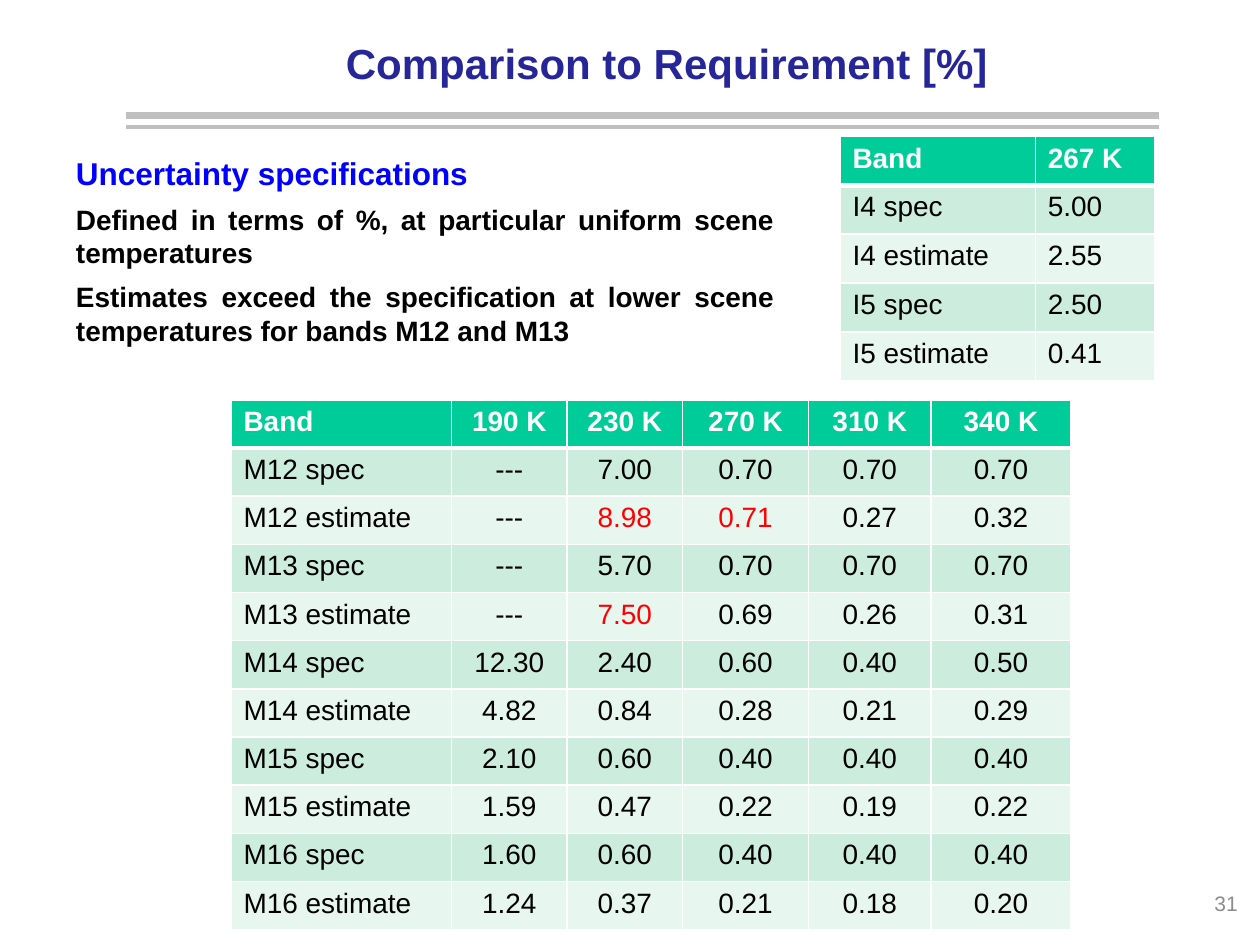
from lxml import etree
from pptx import Presentation
from pptx.dml.color import RGBColor
from pptx.enum import shapes as es, text as et
from pptx.oxml import ns
from pptx.util import Pt

HUE = {
    "rule": "BFBFBF", "title": "262699", "head": "0000FF", "ink": "000000",
    "alert": "FF0000", "page": "8C8C8C", "white": "FFFFFF",
    "top": "00CC99", "odd": "CCECDE", "even": "E7F6EF",
}
LEFT, MID = et.PP_ALIGN.LEFT, et.PP_ALIGN.CENTER
RIGHT, FULL = et.PP_ALIGN.RIGHT, et.PP_ALIGN.JUSTIFY

BANDS_M = [
    ["Band", "190 K", "230 K", "270 K", "310 K", "340 K"],
    ["M12 spec", "---", "7.00", "0.70", "0.70", "0.70"],
    ["M12 estimate", "---", "8.98", "0.71", "0.27", "0.32"],
    ["M13 spec", "---", "5.70", "0.70", "0.70", "0.70"],
    ["M13 estimate", "---", "7.50", "0.69", "0.26", "0.31"],
    ["M14 spec", "12.30", "2.40", "0.60", "0.40", "0.50"],
    ["M14 estimate", "4.82", "0.84", "0.28", "0.21", "0.29"],
    ["M15 spec", "2.10", "0.60", "0.40", "0.40", "0.40"],
    ["M15 estimate", "1.59", "0.47", "0.22", "0.19", "0.22"],
    ["M16 spec", "1.60", "0.60", "0.40", "0.40", "0.40"],
    ["M16 estimate", "1.24", "0.37", "0.21", "0.18", "0.20"],
]
BANDS_I = [
    ["Band", "267 K"],
    ["I4 spec", "5.00"],
    ["I4 estimate", "2.55"],
    ["I5 spec", "2.50"],
    ["I5 estimate", "0.41"],
]
OVER = {(2, 2), (2, 3), (4, 2)}  # estimates above the specification


def rgb(key):
    return RGBColor.from_string(HUE[key])


def style(para, size, key, bold=False, align=LEFT):
    para.alignment = align
    font = para.font
    font.name, font.size, font.bold = "Arial", Pt(size), bold
    font.color.rgb = rgb(key)


def add_rule(slide, y, width):
    line = slide.shapes.add_connector(
        es.MSO_CONNECTOR.STRAIGHT, Pt(72), Pt(y), Pt(662.4), Pt(y))
    line.line.color.rgb = rgb("rule")
    line.line.width = Pt(width)
    etree.SubElement(line._element.spPr, ns.qn("a:effectLst"))


def add_label(slide, box, words, size, key, bold, align):
    frame = slide.shapes.add_textbox(*map(Pt, box)).text_frame
    frame.word_wrap = True
    frame.vertical_anchor = et.MSO_ANCHOR.MIDDLE
    frame.text = words
    style(frame.paragraphs[0], size, key, bold, align)


def add_notes(slide, box, items):
    shape = slide.shapes.add_shape(
        es.MSO_SHAPE.ROUNDED_RECTANGLE, *map(Pt, box))
    shape.shadow.inherit = False
    shape.fill.background()
    shape.line.fill.background()
    frame = shape.text_frame
    frame.word_wrap = True
    frame.vertical_anchor = et.MSO_ANCHOR.TOP
    frame.text = "\n".join(item[0] for item in items)
    for para, (_, size, key, align) in zip(frame.paragraphs, items):
        style(para, size, key, True, align)
        para.space_after = Pt(6)


def add_edges(cell, top, base):
    props = cell._tc.get_or_add_tcPr()
    for side, width in zip("LRTB", (1, 1, top, base)):
        edge = etree.SubElement(props, ns.qn("a:ln" + side), w=str(Pt(width)))
        fill = etree.SubElement(edge, ns.qn("a:solidFill"))
        etree.SubElement(fill, ns.qn("a:srgbClr"), val=HUE["white"])


def add_grid(slide, x, y, cols, high, rows, align, over=()):
    table = slide.shapes.add_table(
        len(rows), len(cols), Pt(x), Pt(y), Pt(sum(cols)),
        Pt(high * len(rows))).table
    for col, wide in zip(table.columns, cols):
        col.width = Pt(wide)
    for r, row in enumerate(rows):
        table.rows[r].height = Pt(high)
        back = "top" if r == 0 else "odd" if r % 2 else "even"
        for c, words in enumerate(row):
            cell = table.cell(r, c)
            # edges must come before the fill in the cell properties
            add_edges(cell, 3 if r == 1 else 1, 3 if r == 0 else 1)
            cell.fill.solid()
            cell.fill.fore_color.rgb = rgb(back)
            cell.text = words
            key = ("white" if r == 0 else
                   "alert" if (r, c) in over else "ink")
            style(cell.text_frame.paragraphs[0], 16, key, r == 0,
                  align if c else LEFT)


def main():
    deck = Presentation()
    deck.slide_width, deck.slide_height = Pt(720), Pt(540)
    slide = deck.slides.add_slide(deck.slide_layouts[6])

    # Double rule under the title
    add_rule(slide, 66, 4)
    add_rule(slide, 72.5, 2)

    # Tables of bands
    add_grid(slide, 132, 228.5, [126, 66, 66, 72, 70, 80], 27.55,
             BANDS_M, MID, OVER)
    add_grid(slide, 480, 78, [111.6, 68.4], 27.9, BANDS_I, LEFT)

    # Explanation
    add_notes(slide, (30, 78, 426, 131), [
        ("Uncertainty specifications", 18, "head", LEFT),
        ("Defined in terms of %, at particular uniform scene temperatures",
         16, "ink", FULL),
        ("Estimates exceed the specification at lower scene temperatures "
         "for bands M12 and M13", 16, "ink", FULL),
    ])

    # Title and page number
    add_label(slide, (90, 12, 582, 48), "Comparison to Requirement [%]",
              24, "title", True, MID)
    add_label(slide, (662.4, 498, 52, 36), "31", 12, "page", False, RIGHT)

    deck.save("out.pptx")


if __name__ == "__main__":
    main()
